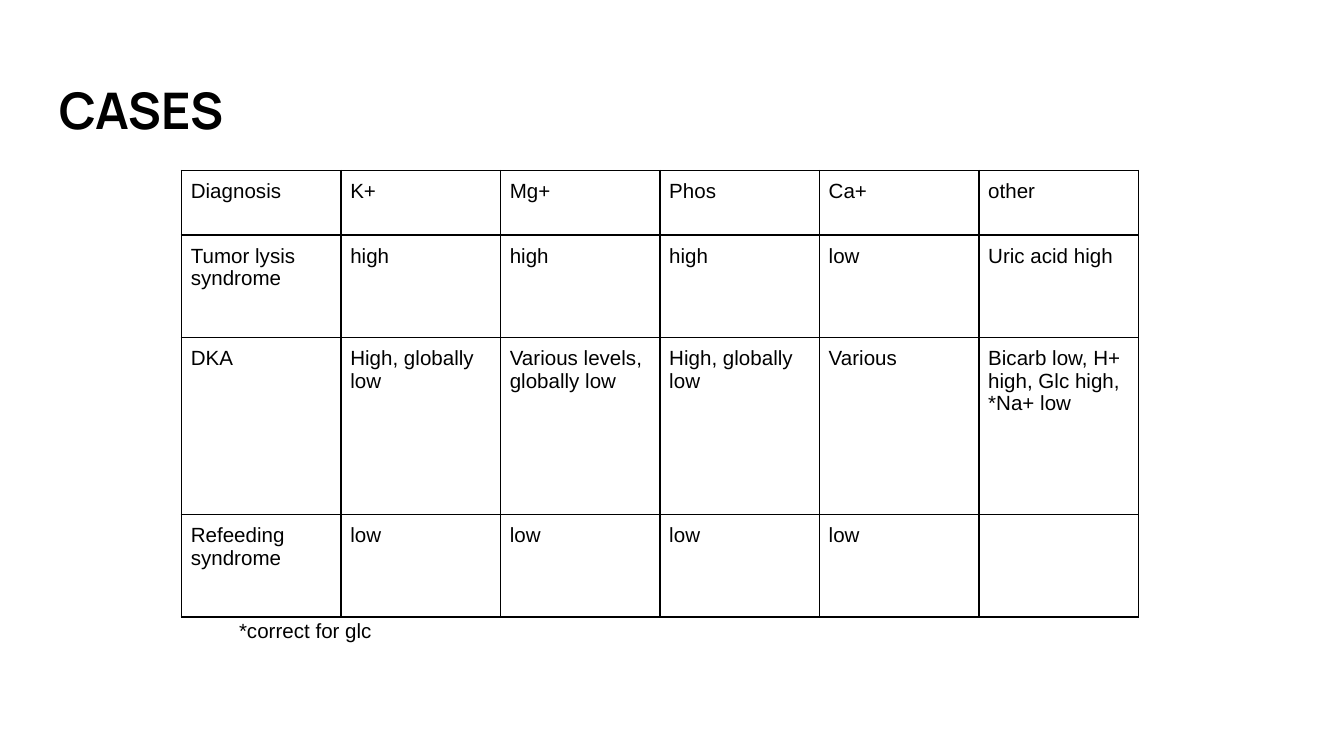
from lxml.etree import SubElement
from pptx import Presentation
from pptx.dml.color import RGBColor
from pptx.enum.text import MSO_ANCHOR
from pptx.oxml.ns import qn
from pptx.util import Inches, Pt

COLORS = {"ink": "000000", "paper": "FFFFFF"}
WIDTH = 10
HEIGHT = WIDTH * 9 / 16
TABLE_WIDTH = 7.12
ROW_HEIGHTS = [0.48, 0.76, 1.32, 0.76]
CASES = [
    ["Diagnosis", "K+", "Mg+", "Phos", "Ca+", "other"],
    ["Tumor lysis syndrome", "high", "high", "high", "low", "Uric acid high"],
    ["DKA", "High, globally low", "Various levels, globally low",
     "High, globally low", "Various", "Bicarb low, H+ high, Glc high, *Na+ low"],
    ["Refeeding syndrome", "low", "low", "low", "low", ""],
]


def add_run(p, text, size, font="Arial", bold=False):
    """Add one styled run to a paragraph."""
    r = p.add_run()
    r.text = text
    r.font.size, r.font.name, r.font.bold = Pt(size), font, bold
    r.font.color.rgb = RGBColor.from_string(COLORS["ink"])


def add_label(s, box, text, size, anchor=MSO_ANCHOR.TOP, **style):
    """Place a single line of text in the given box."""
    tf = s.shapes.add_textbox(*map(Inches, box)).text_frame
    tf.word_wrap = True
    tf.vertical_anchor = anchor
    tf.margin_left = tf.margin_right = tf.margin_top = tf.margin_bottom = Inches(0.1)
    add_run(tf.paragraphs[0], text, size, **style)


def set_borders(cell):
    """Draw a one point line on all four sides of a cell."""
    tc_pr = cell._tc.get_or_add_tcPr()
    for i, side in enumerate(("lnL", "lnR", "lnT", "lnB")):
        ln = tc_pr.makeelement(qn(f"a:{side}"), {"w": str(Pt(1))})
        fill = SubElement(ln, qn("a:solidFill"))
        SubElement(fill, qn("a:srgbClr"), val=COLORS["ink"])
        tc_pr.insert(i, ln)


def add_cases_table(s, left, top, width):
    """Place the electrolyte table in equal columns across the given width."""
    n_rows, n_cols = len(CASES), len(CASES[0])
    box = left, top, width, sum(ROW_HEIGHTS)
    table = s.shapes.add_table(n_rows, n_cols, *map(Inches, box)).table
    table.first_row = table.horz_banding = False
    for row, height, texts in zip(table.rows, ROW_HEIGHTS, CASES):
        row.height = Inches(height)
        for cell, text in zip(row.cells, texts):
            cell.margin_left = cell.margin_right = Inches(0.07)
            cell.margin_top = cell.margin_bottom = Inches(0.07)
            cell.fill.background()
            set_borders(cell)
            if text:
                add_run(cell.text_frame.paragraphs[0], text, 11)


def build_cases_slide(prs):
    """Build the slide of cases: title, table and footnote."""
    s = prs.slides.add_slide(prs.slide_layouts[6])
    s.background.fill.solid()
    s.background.fill.fore_color.rgb = RGBColor.from_string(COLORS["paper"])
    add_label(s, (0.34, 0.49, 1.81, 0.68), "CASES", 27, font="Manrope", bold=True)
    add_cases_table(s, 1.35, 1.27, TABLE_WIDTH)
    add_label(s, (1.68, 4.49, 3.28, 0.4), "*correct for glc", 11, MSO_ANCHOR.MIDDLE)


def main():
    """Create and save the presentation."""
    prs = Presentation()
    prs.slide_width, prs.slide_height = Inches(WIDTH), Inches(HEIGHT)
    build_cases_slide(prs)
    prs.save("out.pptx")


if __name__ == "__main__":
    main()
